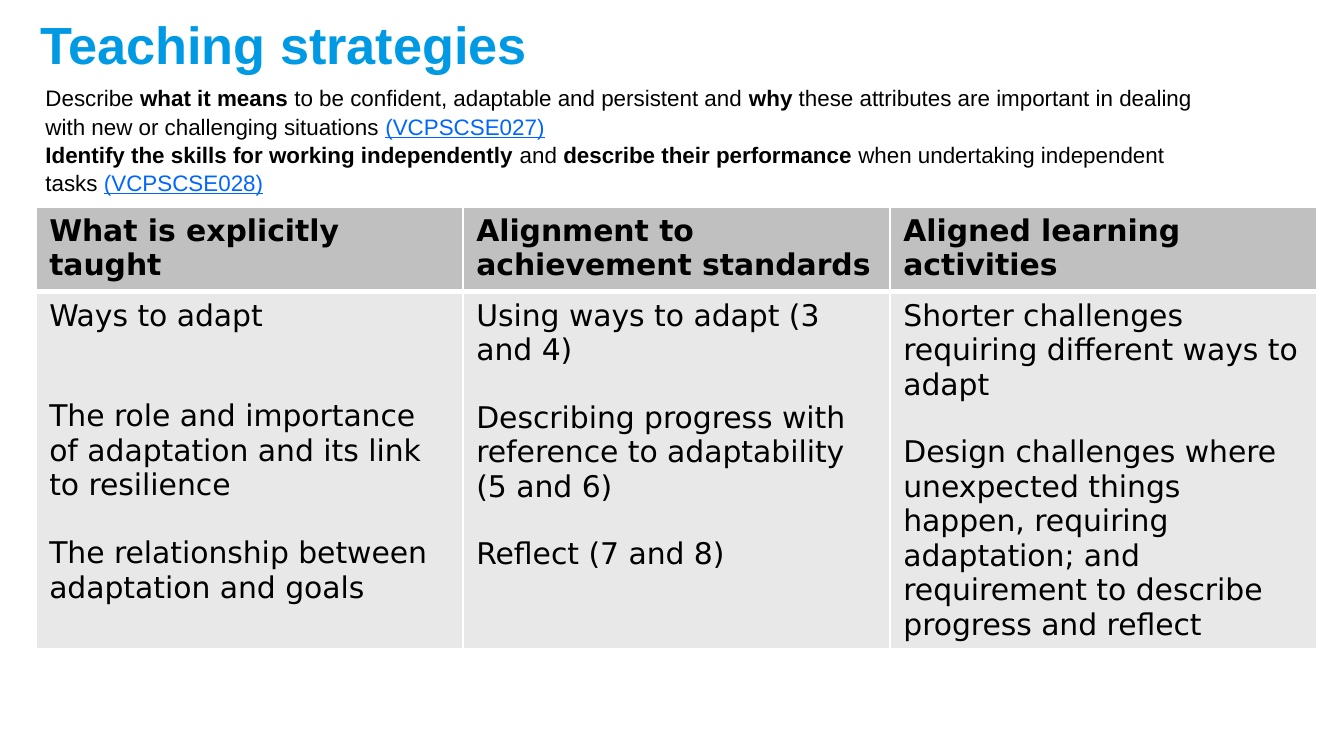
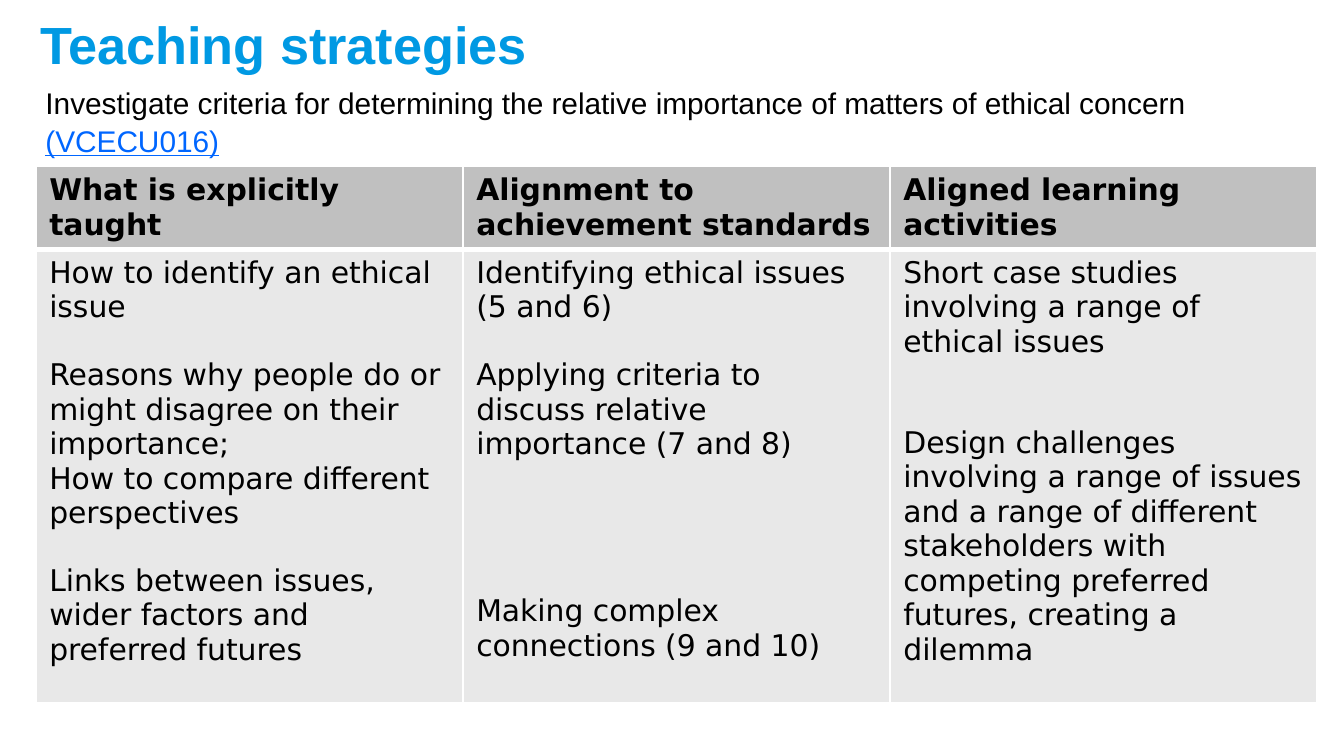
import pptx
import pptx.dml.color
import pptx.enum.text
import pptx.oxml
import pptx.oxml.ns
import pptx.util
from lxml import etree

Pt = pptx.util.Pt
RGBColor = pptx.dml.color.RGBColor
TITLE_BLUE = RGBColor(0x00, 0x99, 0xE3)
LINK_BLUE = RGBColor(0x00, 0x66, 0xFF)
BLACK = RGBColor(0x00, 0x00, 0x00)
WHITE = RGBColor(0xFF, 0xFF, 0xFF)
HEADER_GREY = RGBColor(0xC0, 0xC0, 0xC0)
BODY_GREY = RGBColor(0xE8, 0xE8, 0xE8)
TITLE_FONT = "Arial"
TABLE_FONT = "DejaVu Sans"
TABLE_SIZE = 16
TABLE_LEFT = 19.2
TABLE_WIDTH = 686.4
GAP = 17.75
HEADERS = [
    "What is explicitly taught",
    "Alignment to achievement standards",
    "Aligned learning activities",
]


def add_run(p, text, font, size, color=BLACK, bold=False, underline=False):
    """Append one formatted run to a paragraph."""
    r = p.add_run()
    r.text = text
    r.font.name = font
    r.font.size = Pt(size)
    r.font.bold = bold
    r.font.underline = underline
    r.font.color.rgb = color


def add_paragraph(tf, index):
    """Return the first paragraph of a frame, or a new one after it."""
    return tf.paragraphs[0] if index == 0 else tf.add_paragraph()


def set_title(s, text):
    """Place and format the slide title."""
    sp = s.shapes.title
    sp.left, sp.top, sp.width, sp.height = Pt(14.4), Pt(8.6), Pt(686.4), Pt(29.5)
    tf = sp.text_frame
    tf.auto_size = pptx.enum.text.MSO_AUTO_SIZE.NONE
    tf.vertical_anchor = pptx.enum.text.MSO_ANCHOR.MIDDLE
    p = tf.paragraphs[0]
    p.alignment = pptx.enum.text.PP_ALIGN.LEFT
    add_run(p, text, TITLE_FONT, 28, TITLE_BLUE, bold=True)


def add_standards(s, paragraphs, size, width, height):
    """Add curriculum descriptions made of plain, bold and link runs."""
    sp = s.shapes.add_textbox(Pt(17.3), Pt(41), Pt(width), Pt(height))
    tf = sp.text_frame
    tf.word_wrap = True
    for i, runs in enumerate(paragraphs):
        p = add_paragraph(tf, i)
        p.line_spacing = 1.05
        for text, style in runs:
            link = style == "link"
            add_run(p, text, TITLE_FONT, size, LINK_BLUE if link else BLACK,
                    bold=style == "bold", underline=link)


def set_borders(cell, top, bottom):
    """Give a cell white borders, one point wide at the sides."""
    tcPr = cell._tc.get_or_add_tcPr()
    for side, width in (("L", 1), ("R", 1), ("T", top), ("B", bottom)):
        ln = etree.SubElement(tcPr, pptx.oxml.ns.qn(f"a:ln{side}"), w=str(Pt(width)))
        fill = etree.SubElement(ln, pptx.oxml.ns.qn("a:solidFill"))
        etree.SubElement(fill, pptx.oxml.ns.qn("a:srgbClr"), val=str(WHITE))


def fill_cell(cell, items, header):
    """Write (text, gap count) items into a bordered, filled cell."""
    set_borders(cell, 1 if header else 3, 3 if header else 1)
    cell.fill.solid()
    cell.fill.fore_color.rgb = HEADER_GREY if header else BODY_GREY
    for i, (text, gaps) in enumerate(items):
        p = add_paragraph(cell.text_frame, i)
        if gaps:
            p.space_before = Pt(gaps * GAP)
        add_run(p, text, TABLE_FONT, TABLE_SIZE, bold=header)


def add_strategy_table(s, top, heights, columns):
    """Add the three-column table of teaching strategies."""
    table = s.shapes.add_table(2, len(HEADERS), Pt(TABLE_LEFT), Pt(top),
                               Pt(TABLE_WIDTH), Pt(sum(heights))).table
    for row, height in zip(table.rows, heights):
        row.height = Pt(height)
    for i, (heading, items) in enumerate(zip(HEADERS, columns)):
        table.columns[i].width = Pt(TABLE_WIDTH / len(HEADERS))
        fill_cell(table.cell(0, i), [(heading, 0)], True)
        fill_cell(table.cell(1, i), items, False)


def add_strategy_slide(prs):
    """Add a slide with the shared title."""
    s = prs.slides.add_slide(prs.slide_layouts[5])
    set_title(s, "Teaching strategies")
    return s


def main():
    """Build both slides and save the deck."""
    prs = pptx.Presentation()
    prs.slide_width, prs.slide_height = Pt(720), Pt(405)

    s = add_strategy_slide(prs)
    add_strategy_table(s, 110.9, (45.5, 190.5), [
        [("Ways to adapt", 0),
         ("The role and importance of adaptation and its link to resilience", 2),
         ("The relationship between adaptation and goals", 1)],
        [("Using ways to adapt (3 and 4)", 0),
         ("Describing progress with reference to adaptability (5 and 6)", 1),
         ("Reflect (7 and 8)", 1)],
        [("Shorter challenges requiring different ways to adapt", 0),
         ("Design challenges where unexpected things happen, requiring adaptation; "
          "and requirement to describe progress and reflect", 1)],
    ])
    add_standards(s, [
        [("Describe ", "plain"), ("what it means ", "bold"),
         ("to be confident, adaptable and persistent and ", "plain"), ("why", "bold"),
         (" these attributes are important in dealing with new or challenging "
          "situations ", "plain"), ("(VCPSCSE027)", "link")],
        [("Identify the skills for working independently ", "bold"), ("and ", "plain"),
         ("describe their performance ", "bold"),
         ("when undertaking independent tasks ", "plain"), ("(VCPSCSE028)", "link")],
    ], 12, 643, 78.5)

    s = add_strategy_slide(prs)
    add_strategy_table(s, 89.3, (44, 243), [
        [("How to identify an ethical issue", 0),
         ("Reasons why people do or might disagree on their importance;", 1),
         ("How to compare different perspectives", 0),
         ("Links between issues, wider factors and preferred futures", 1)],
        [("Identifying ethical issues (5 and 6)", 0),
         ("Applying criteria to discuss relative importance (7 and 8)", 1),
         ("Making complex connections (9 and 10)", 4)],
        [("Short case studies involving a range of ethical issues", 0),
         ("Design challenges involving a range of issues and a range of different "
          "stakeholders with competing preferred futures, creating a dilemma", 2)],
    ])
    add_standards(s, [
        [("Investigate criteria for determining the relative importance of matters "
          "of ethical concern ", "plain"), ("(VCECU016)", "link")],
    ], 16, 631.5, 75)

    prs.save("out.pptx")


if __name__ == "__main__":
    main()
